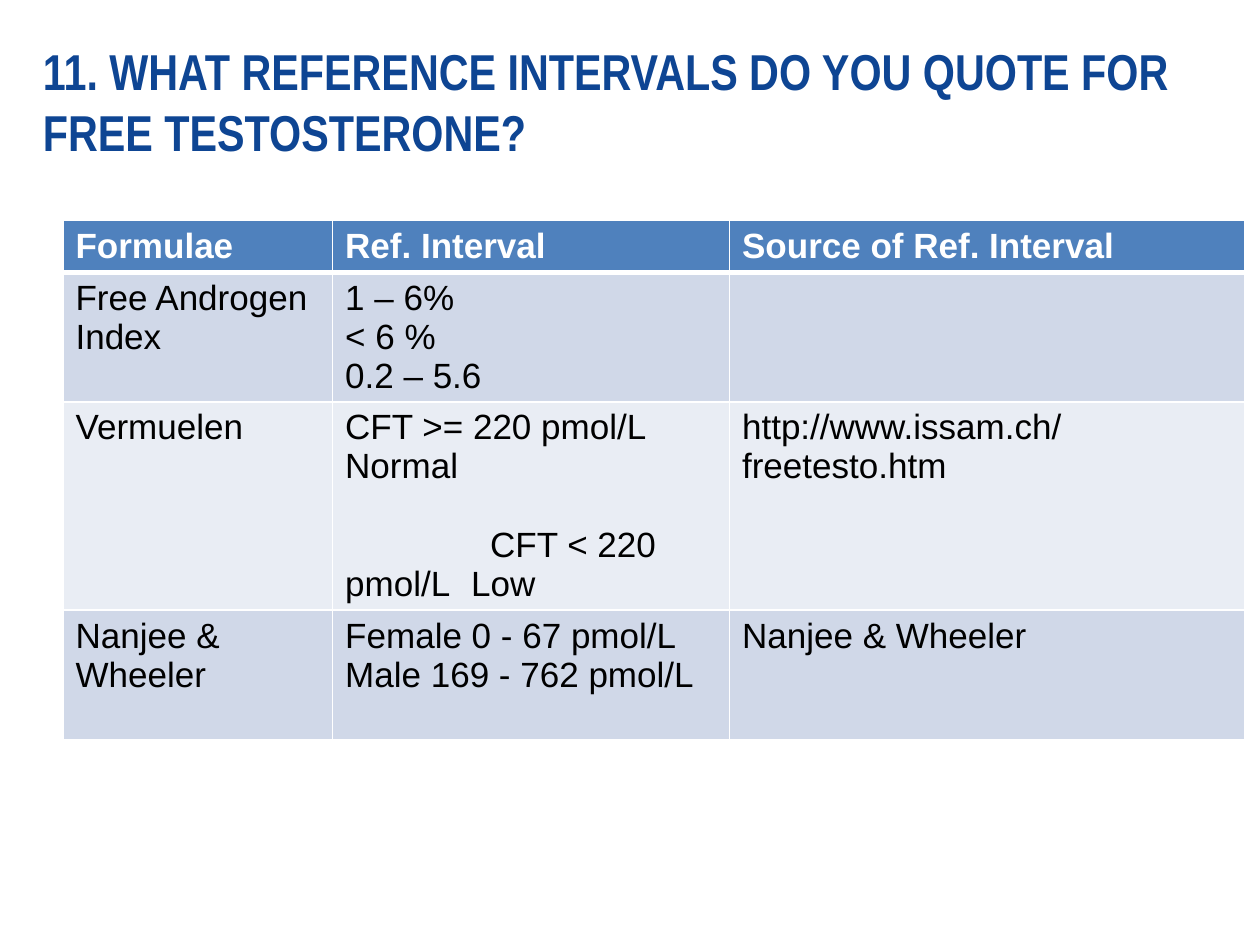
from lxml.etree import SubElement as Sub
from pptx import Presentation
from pptx.dml.color import RGBColor as RGB
from pptx.enum.text import MSO_ANCHOR as Anchor, MSO_AUTO_SIZE as Fit, PP_ALIGN as Align
from pptx.oxml.ns import qn
from pptx.util import Inches as In, Pt

HUES = {"title": "0E4593", "head": "4F81BD", "odd": "D0D8E8",
        "even": "E9EDF4", "line": "FFFFFF", "text": "000000"}
COLS = [2.14, 3.15, 4.09]
ROWS = [0.41, 1.03, 1.65, 1.03]
DATA = [
    ["Formulae", "Ref. Interval", "Source of Ref. Interval"],
    ["Free Androgen Index", "1 – 6%\n< 6 %\n0.2 – 5.6", ""],
    ["Vermuelen", "CFT >= 220 pmol/L Normal\nCFT < 220 pmol/L\tLow",
     "http://www.issam.ch/freetesto.htm"],
    ["Nanjee & Wheeler", "Female 0 - 67 pmol/L\nMale 169 - 762 pmol/L",
     "Nanjee & Wheeler"],
]


def style(para, face, size, hue, bold):
    for run in para.runs:
        font = run.font
        font.name, font.size, font.bold = face, Pt(size), bold
        font.color.rgb = RGB.from_string(HUES[hue])


def edge(cell, side, width):
    """Draw one side of a cell; call in the order L, R, T, B, before the fill."""
    line = Sub(cell._tc.get_or_add_tcPr(), qn(f"a:ln{side}"), w=str(Pt(width)))
    Sub(Sub(line, qn("a:solidFill")), qn("a:srgbClr"), val=HUES["line"])


deck = Presentation()
deck.slide_width, deck.slide_height = In(10), In(7.5)
slide = deck.slides.add_slide(deck.slide_layouts[5])

title = slide.shapes.title
title.left, title.top, title.width, title.height = In(0.24), In(0.36), In(9.42), In(0.88)
frame = title.text_frame
frame.text = "11. WHAT REFERENCE INTERVALS DO YOU QUOTE FOR FREE TESTOSTERONE?"
frame.word_wrap, frame.auto_size = True, Fit.NONE
frame.vertical_anchor = Anchor.MIDDLE
frame.paragraphs[0].alignment = Align.LEFT
style(frame.paragraphs[0], "Arial Narrow", 28.8, "title", True)

table = slide.shapes.add_table(len(ROWS), len(COLS), In(0.5), In(1.75),
                               In(sum(COLS)), In(sum(ROWS))).table
for col, width in zip(table.columns, COLS):
    col.width = In(width)
for row, height in zip(table.rows, ROWS):
    row.height = In(height)

for r, texts in enumerate(DATA):
    band = "head" if r == 0 else "odd" if r % 2 else "even"
    for c, text in enumerate(texts):
        cell = table.cell(r, c)
        cell.text_frame.text = text
        for side in "LRTB":
            thick = (r == 0 and side == "B") or (r == 1 and side == "T")
            edge(cell, side, 3 if thick else 1)
        cell.fill.solid()
        cell.fill.fore_color.rgb = RGB.from_string(HUES[band])
        for para in cell.text_frame.paragraphs:
            style(para, "Arial", 20, "line" if r == 0 else "text", r == 0)

# The low range starts one line down, indented, with its verdict at a tab stop
low = table.cell(2, 1).text_frame.paragraphs[1]
low.space_before = Pt(22.5)
props = low._p.get_or_add_pPr()
props.set("marL", "0")
props.set("indent", str(In(1.15)))
Sub(Sub(props, qn("a:tabLst")), qn("a:tab"), pos=str(In(1.37)), algn="l")

deck.save("out.pptx")
